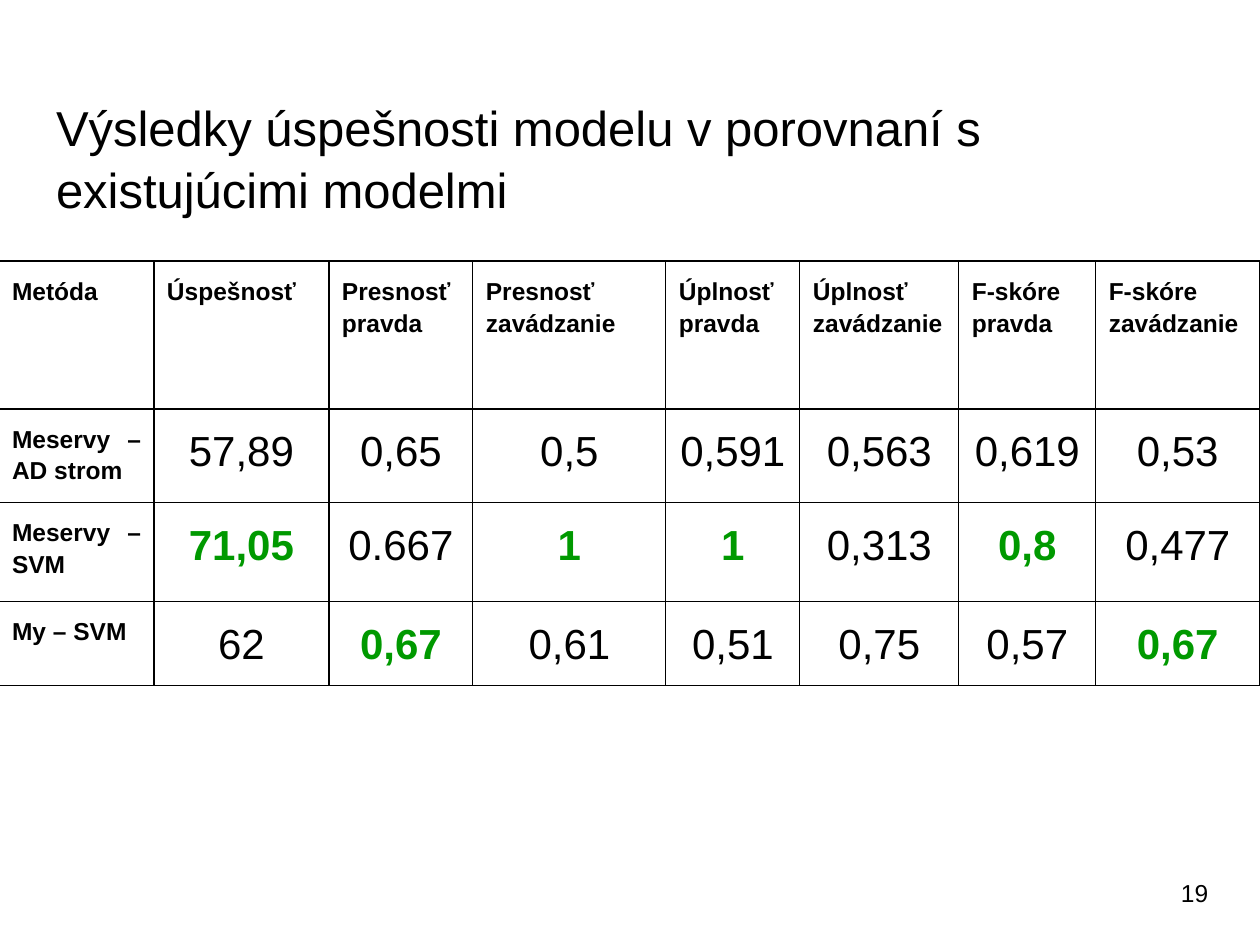
from lxml import etree
from pptx import Presentation
from pptx.dml.color import RGBColor
from pptx.enum.text import MSO_ANCHOR, MSO_AUTO_SIZE, PP_ALIGN
from pptx.oxml.ns import qn
from pptx.util import Emu, Pt

LEFT, CENTER, JUSTIFY = PP_ALIGN.LEFT, PP_ALIGN.CENTER, PP_ALIGN.JUSTIFY
TOP, MIDDLE = MSO_ANCHOR.TOP, MSO_ANCHOR.MIDDLE
NO_AUTOFIT = MSO_AUTO_SIZE.NONE
TITLE_ONLY = 5
PX_PER_INCH = 126
INSET = 13
COLORS = {"text": "000000", "best": "009900", "border": "000000"}

TITLE = "Výsledky úspešnosti modelu v porovnaní s existujúcimi modelmi"
COLUMN_WIDTHS = [155, 175, 144, 193, 134, 159, 137, 164]
ROW_HEIGHTS = [148, 93, 99, 80]
RESULTS = [
    ["Metóda", "Úspešnosť", "Presnosť\npravda", "Presnosť zavádzanie", "Úplnosť pravda",
     "Úplnosť zavádzanie", "F-skóre pravda", "F-skóre zavádzanie"],
    ["Meservy – AD strom", "57,89", "0,65", "0,5", "0,591", "0,563", "0,619", "0,53"],
    ["Meservy – SVM", "71,05", "0.667", "1", "1", "0,313", "0,8", "0,477"],
    ["My – SVM", "62", "0,67", "0,61", "0,51", "0,75", "0,57", "0,67"],
]
BEST = {(2, 1), (2, 3), (2, 4), (2, 6), (3, 2), (3, 7)}


def px(length):
    """Turn pixels into EMU."""
    return Emu(round(length * 914400 / PX_PER_INCH))


def set_all(target, values):
    """Set every attribute named in a dict of format values."""
    for name, value in values.items():
        setattr(target, name, value)


def write(frame, text, size, align=LEFT, bold=False, color="text", spacing=1.0):
    """Fill a text frame with one formatted paragraph per line."""
    frame.text = text
    for para in frame.paragraphs:
        set_all(para, {"alignment": align, "line_spacing": spacing})
        for span in para.runs:
            set_all(span.font, {"name": "Arial", "size": Pt(size), "bold": bold})
            span.font.color.rgb = RGBColor.from_string(COLORS[color])


def set_insets(target):
    """Give a text frame or cell equal insets."""
    set_all(target, {f"margin_{side}": px(INSET) for side in ("left", "right", "top", "bottom")})


def add_borders(cell):
    """Draw a thin line on each side of a cell."""
    properties = cell._tc.get_or_add_tcPr()
    for position, side in enumerate(("a:lnL", "a:lnR", "a:lnT", "a:lnB")):
        line = etree.Element(qn(side), w=str(Pt(0.75)))
        fill = etree.SubElement(line, qn("a:solidFill"))
        etree.SubElement(fill, qn("a:srgbClr"), val=COLORS["border"])
        properties.insert(position, line)


def place_title(page, left, top, width, height):
    """Move and format the title placeholder."""
    box = page.shapes.title
    set_all(box, {"left": px(left), "top": px(top), "width": px(width), "height": px(height)})
    frame = box.text_frame
    set_all(frame, {"word_wrap": True, "auto_size": NO_AUTOFIT, "vertical_anchor": TOP})
    set_insets(frame)
    write(frame, TITLE, 28, spacing=1.05)


def place_page_number(page, left, top, width, height):
    """Add the page number."""
    frame = page.shapes.add_textbox(px(left), px(top), px(width), px(height)).text_frame
    set_all(frame, {"word_wrap": True, "vertical_anchor": MIDDLE})
    set_insets(frame)
    write(frame, "19", 14)


def place_results(page, left, top):
    """Add the comparison table with the best values highlighted."""
    box = page.shapes.add_table(len(ROW_HEIGHTS), len(COLUMN_WIDTHS), px(left), px(top),
                                px(sum(COLUMN_WIDTHS)), px(sum(ROW_HEIGHTS)))
    table = box.table
    set_all(table, {"first_row": False, "horz_banding": False})
    for column, width in zip(table.columns, COLUMN_WIDTHS):
        column.width = px(width)
    for row, height in zip(table.rows, ROW_HEIGHTS):
        row.height = px(height)
    for row_index, values in enumerate(RESULTS):
        for column_index, text in enumerate(values):
            cell = table.cell(row_index, column_index)
            heading = row_index == 0 or column_index == 0
            best = (row_index, column_index) in BEST
            cell.fill.background()
            cell.vertical_anchor = TOP
            set_insets(cell)
            add_borders(cell)
            write(cell.text_frame, text, 14 if heading else 24,
                  JUSTIFY if heading else CENTER, heading or best,
                  "best" if best else "text", 1.15)


def main():
    """Build and save the deck."""
    deck = Presentation()
    set_all(deck, {"slide_width": px(1260), "slide_height": px(945)})
    page = deck.slides.add_slide(deck.slide_layouts[TITLE_ONLY])
    place_title(page, 43, 82, 1174, 105)
    place_page_number(page, 1168, 857, 76, 72)
    place_results(page, -1, 261)
    deck.save("out.pptx")


if __name__ == "__main__":
    main()
